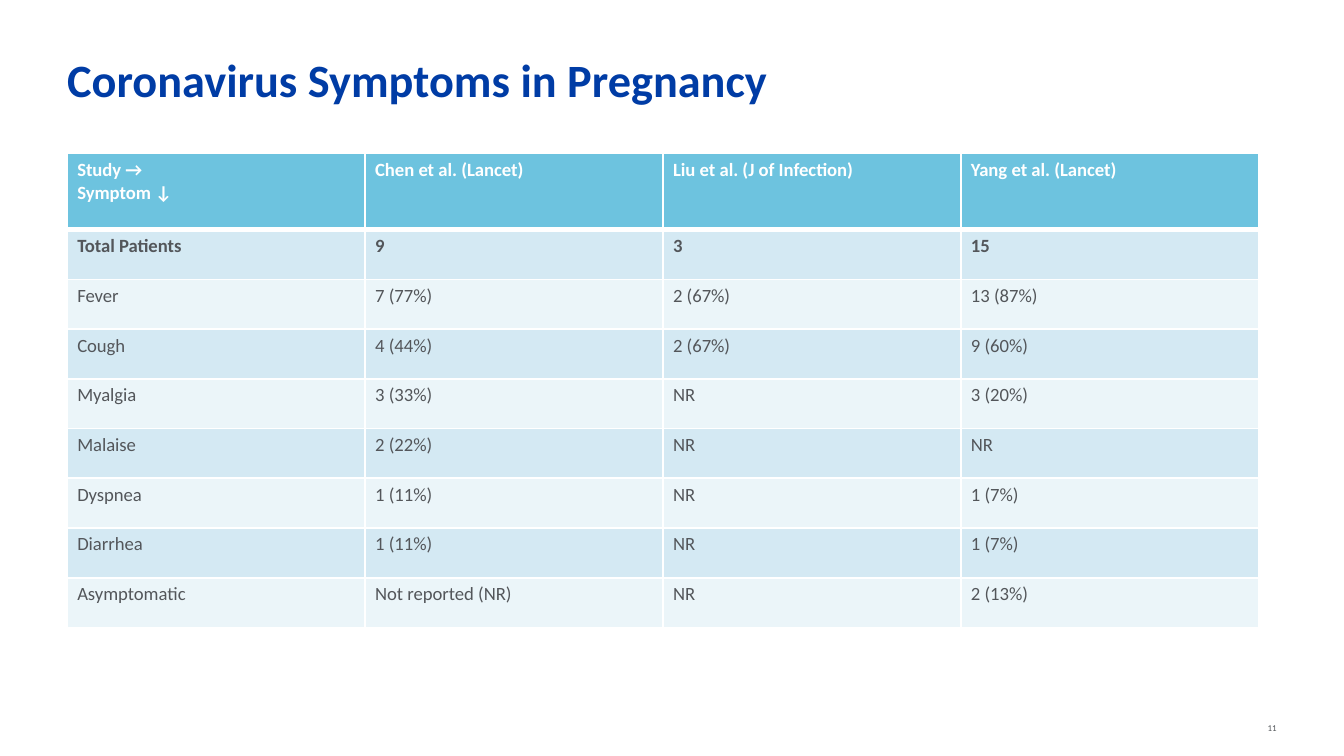
from dataclasses import dataclass

from lxml import etree
from pptx import Presentation
from pptx.dml.color import RGBColor
from pptx.enum.text import MSO_ANCHOR, PP_ALIGN
from pptx.oxml.ns import qn
from pptx.util import Cm, Pt

TOP, BOTTOM = MSO_ANCHOR.TOP, MSO_ANCHOR.BOTTOM
LEFT, RIGHT = PP_ALIGN.LEFT, PP_ALIGN.RIGHT


@dataclass(frozen=True)
class Theme:
    font: str = "Calibri"
    blue: str = "003CA5"
    grey: str = "53565A"
    white: str = "FFFFFF"
    head: str = "6DC3DF"
    bands: tuple = ("D4E9F3", "EBF5F9")
    title: float = 24.8
    body: float = 10
    small: float = 4.8


THEME = Theme()

ROWS = [
    ("Study →\nSymptom ↓", "Chen et al. (Lancet)",
     "Liu et al. (J of Infection)", "Yang et al. (Lancet)"),
    ("Total Patients", "9", "3", "15"),
    ("Fever", "7 (77%)", "2 (67%)", "13 (87%)"),
    ("Cough", "4 (44%)", "2 (67%)", "9 (60%)"),
    ("Myalgia", "3 (33%)", "NR", "3 (20%)"),
    ("Malaise", "2 (22%)", "NR", "NR"),
    ("Dyspnea", "1 (11%)", "NR", "1 (7%)"),
    ("Diarrhea", "1 (11%)", "NR", "1 (7%)"),
    ("Asymptomatic", "Not reported (NR)", "NR", "2 (13%)"),
]


def set_all(item, values):
    for name, value in values.items():
        setattr(item, name, value)


def write(frame, text, size, color, bold=False, align=LEFT):
    frame.text = text
    for para in frame.paragraphs:
        para.alignment = align
        set_all(para.font, {"name": THEME.font, "size": Pt(size), "bold": bold})
        para.font.color.rgb = RGBColor.from_string(color)


def place(shape, box, anchor):
    names = ("left", "top", "width", "height")
    set_all(shape, dict(zip(names, map(Cm, box))))
    set_all(shape.text_frame, {
        "margin_left": 0, "margin_right": 0, "margin_top": 0,
        "margin_bottom": 0, "word_wrap": True, "vertical_anchor": anchor})


def add_title(slide, text):
    title = slide.shapes.title
    place(title, (1.27, 0.97, 22.86, 1.65), TOP)
    write(title.text_frame, text, THEME.title, THEME.blue, True)


def add_number(slide, text):
    box = slide.shapes.add_textbox(0, 0, 0, 0)
    place(box, (22.07, 13.28, 2.06, 0.58), BOTTOM)
    write(box.text_frame, text, THEME.small, THEME.grey, align=RIGHT)


def add_edges(cell, base):
    # Borders must come before the fill in the cell properties
    props = cell._tc.get_or_add_tcPr()
    for tag, width in (("lnL", 1), ("lnR", 1), ("lnT", 1), ("lnB", base)):
        line = etree.SubElement(props, qn("a:" + tag), w=str(Pt(width)))
        fill = etree.SubElement(line, qn("a:solidFill"))
        etree.SubElement(fill, qn("a:srgbClr"), val=THEME.white)


def fill_cell(cell, text, row):
    head = row == 0
    add_edges(cell, 3 if head else 1)
    cell.fill.solid()
    shade = THEME.head if head else THEME.bands[(row - 1) % 2]
    cell.fill.fore_color.rgb = RGBColor.from_string(shade)
    set_all(cell, {
        "margin_left": Cm(0.19), "margin_right": Cm(0.19),
        "margin_top": Cm(0.1), "margin_bottom": Cm(0.1),
        "vertical_anchor": TOP})
    color = THEME.white if head else THEME.grey
    write(cell.text_frame, text, THEME.body, color, row < 2)


def add_grid(slide, rows):
    wide, first, rest = 5.63, 1.44, 0.94
    count = len(rows[0])
    high = first + rest * (len(rows) - 1)
    table = slide.shapes.add_table(
        len(rows), count, Cm(1.27), Cm(2.9), Cm(wide * count), Cm(high)).table
    for col in table.columns:
        col.width = Cm(wide)
    for r, texts in enumerate(rows):
        table.rows[r].height = Cm(rest if r else first)
        for c, text in enumerate(texts):
            fill_cell(table.cell(r, c), text, r)


def main():
    deck = Presentation()
    set_all(deck, {"slide_width": Cm(25.4), "slide_height": Cm(14.29)})
    slide = deck.slides.add_slide(deck.slide_layouts[5])

    # Heading and page number
    add_title(slide, "Coronavirus Symptoms in Pregnancy")
    add_number(slide, "11")

    # Symptoms by study
    add_grid(slide, ROWS)

    deck.save("out.pptx")


if __name__ == "__main__":
    main()
